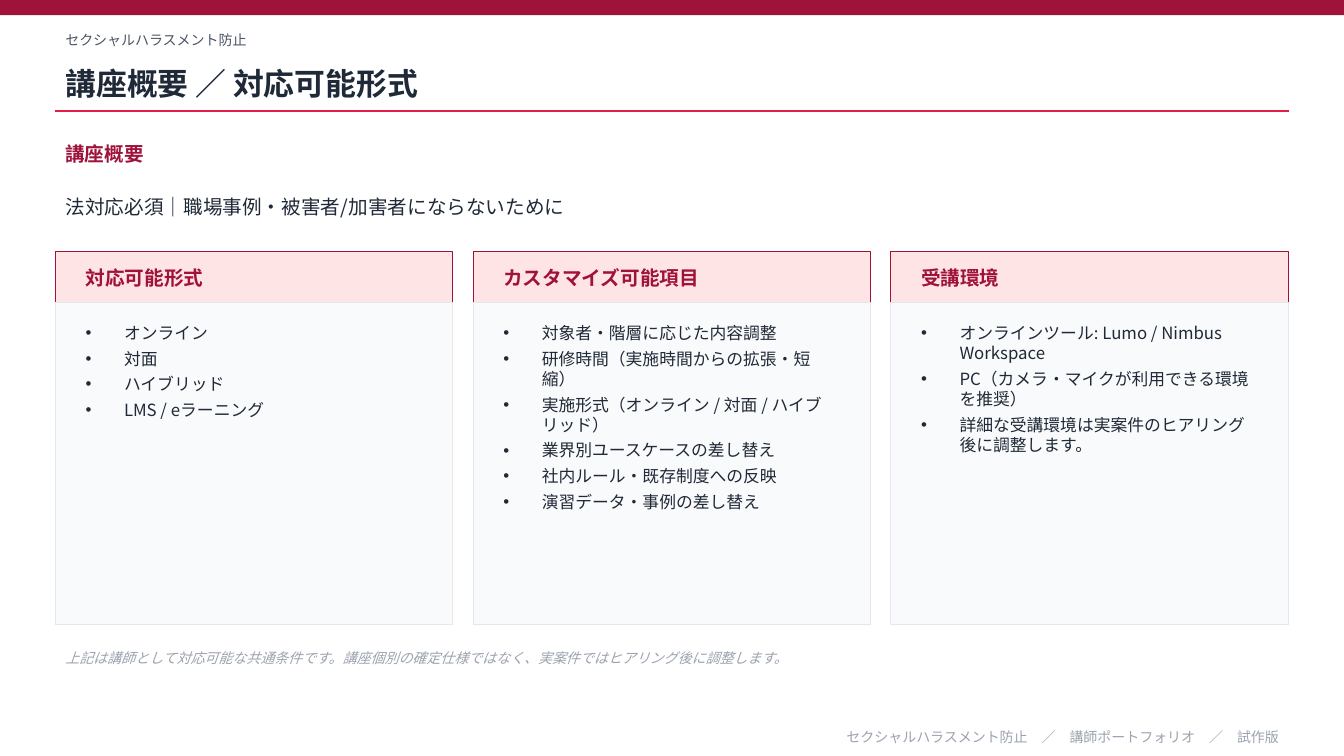
from dataclasses import dataclass

from lxml import etree
from pptx import Presentation
from pptx.dml.color import RGBColor
from pptx.enum.shapes import MSO_CONNECTOR, MSO_SHAPE
from pptx.enum.text import MSO_ANCHOR, MSO_AUTO_SIZE, PP_ALIGN
from pptx.oxml.ns import qn
from pptx.util import Inches, Pt

RECTANGLE = MSO_SHAPE.RECTANGLE
STRAIGHT = MSO_CONNECTOR.STRAIGHT
TOP, MIDDLE = MSO_ANCHOR.TOP, MSO_ANCHOR.MIDDLE
LEFT, RIGHT = PP_ALIGN.LEFT, PP_ALIGN.RIGHT
NO_AUTOFIT = MSO_AUTO_SIZE.NONE
COMPARISON_LAYOUT = 4


@dataclass(frozen=True)
class Theme:
    font: str = "Noto Sans CJK JP"
    crimson: str = "9F1239"
    rule: str = "E11D48"
    blush: str = "FFE4E6"
    panel: str = "F9FAFB"
    panel_edge: str = "E5E7EB"
    ink: str = "1F2937"
    slate: str = "4B5563"
    muted: str = "9CA3AF"
    title_size: int = 22
    heading_size: int = 14
    list_size: int = 12
    small_size: int = 10


class SlideBuilder:
    def __init__(self, slide, theme):
        self.slide = slide
        self.theme = theme

    def rectangle(self, left, top, width, height, fill, edge=None):
        panel = self.slide.shapes.add_shape(
            RECTANGLE, Inches(left), Inches(top), Inches(width), Inches(height))
        panel.shadow.inherit = False
        panel.fill.solid()
        panel.fill.fore_color.rgb = RGBColor.from_string(fill)
        if edge:
            panel.line.color.rgb = RGBColor.from_string(edge)
            panel.line.width = Pt(0.75)
        else:
            panel.line.fill.background()

    def rule(self, left, right, top):
        line = self.slide.shapes.add_connector(
            STRAIGHT, Inches(left), Inches(top), Inches(right), Inches(top))
        line.line.color.rgb = RGBColor.from_string(self.theme.rule)
        line.line.width = Pt(1)
        etree.SubElement(line._element.spPr, qn("a:effectLst"))

    def text(self, box, lines, size, color, placeholder=None, bold=False,
             italic=False, align=LEFT, anchor=MIDDLE, bullets=False):
        left, top, width, height = (Inches(length) for length in box)
        if placeholder is None:
            holder = self.slide.shapes.add_textbox(left, top, width, height)
        else:
            holder = self.slide.placeholders[placeholder]
            holder.left, holder.top = left, top
            holder.width, holder.height = width, height
            # Bring the placeholder in front of the panels drawn so far
            self.slide.shapes._spTree.append(holder._element)
        frame = holder.text_frame
        frame.text = "\n".join(lines)
        frame.word_wrap = True
        frame.auto_size = NO_AUTOFIT
        frame.vertical_anchor = anchor
        for paragraph in frame.paragraphs:
            if bullets:
                self.bullet(paragraph)
            paragraph.alignment = align
            paragraph.space_before = Pt(0)
            paragraph.space_after = Pt(4 if bullets else 0)
            for run in paragraph.runs:
                run.font.name = self.theme.font
                run.font.size = Pt(size)
                run.font.bold = bold
                run.font.italic = italic
                run.font.color.rgb = RGBColor.from_string(color)
                east_asian = etree.SubElement(run.font._element, qn("a:ea"))
                east_asian.set("typeface", self.theme.font)

    def bullet(self, paragraph):
        properties = paragraph._element.get_or_add_pPr()
        properties.set("marL", str(Inches(0.38)))
        properties.set("indent", str(Inches(-0.38)))
        etree.SubElement(properties, qn("a:buChar")).set("char", "•")

    def card(self, left, width, heading, items, placeholder):
        theme = self.theme
        inner_left, inner_width = left + 0.2, width - 0.4
        self.rectangle(left, 2.5, width, 0.5, theme.blush, theme.crimson)
        self.text((inner_left, 2.5, inner_width, 0.5), [heading],
                  theme.heading_size, theme.crimson, bold=True)
        self.rectangle(left, 3, width, 3.2, theme.panel, theme.panel_edge)
        self.text((inner_left, 3.15, inner_width, 2.85), items, theme.list_size,
                  theme.ink, placeholder, anchor=TOP, bullets=True)


CARDS = [
    ("対応可能形式", ["オンライン", "対面", "ハイブリッド", "LMS / eラーニング"]),
    ("カスタマイズ可能項目", [
        "対象者・階層に応じた内容調整",
        "研修時間（実施時間からの拡張・短縮）",
        "実施形式（オンライン / 対面 / ハイブリッド）",
        "業界別ユースケースの差し替え",
        "社内ルール・既存制度への反映",
        "演習データ・事例の差し替え",
    ]),
    ("受講環境", [
        "オンラインツール: Lumo / Nimbus Workspace",
        "PC（カメラ・マイクが利用できる環境を推奨）",
        "詳細な受講環境は実案件のヒアリング後に調整します。",
    ]),
]
MARGIN, CONTENT_WIDTH, CARD_GAP = 0.55, 12.23, 0.2


def main():
    presentation = Presentation()
    presentation.slide_width = Inches(13.33)
    presentation.slide_height = Inches(7.5)
    layout = presentation.slide_layouts[COMPARISON_LAYOUT]
    theme = Theme()
    builder = SlideBuilder(presentation.slides.add_slide(layout), theme)

    def band(top, height):
        return MARGIN, top, CONTENT_WIDTH, height

    # Header
    builder.rectangle(0, 0, 13.33, 0.15, theme.crimson)
    builder.text(band(0.25, 0.3), ["セクシャルハラスメント防止"],
                 theme.small_size, theme.slate)
    builder.text(band(0.55, 0.55), ["講座概要 ／ 対応可能形式"],
                 theme.title_size, theme.ink, placeholder=0, bold=True)
    builder.rule(MARGIN, MARGIN + CONTENT_WIDTH, 1.1)

    # Course overview
    builder.text(band(1.35, 0.35), ["講座概要"],
                 theme.heading_size, theme.crimson, bold=True)
    builder.text(band(1.75, 0.6),
                 ["法対応必須｜職場事例・被害者/加害者にならないために"],
                 theme.heading_size, theme.ink, placeholder=1)

    # Three cards of equal width; their lists use body placeholders 2 to 4
    card_width = (CONTENT_WIDTH - CARD_GAP * (len(CARDS) - 1)) / len(CARDS)
    for column, (heading, items) in enumerate(CARDS):
        card_left = MARGIN + column * (card_width + CARD_GAP)
        builder.card(card_left, card_width, heading, items, column + 2)

    # Note and footer
    builder.text(
        band(6.35, 0.35),
        ["上記は講師として対応可能な共通条件です。講座個別の確定仕様ではなく、"
         "実案件ではヒアリング後に調整します。"],
        theme.small_size, theme.muted, italic=True)
    builder.text(band(7.2, 0.22),
                 ["セクシャルハラスメント防止　／　講師ポートフォリオ　／　試作版"],
                 theme.small_size, theme.muted, align=RIGHT)

    presentation.save("out.pptx")


if __name__ == "__main__":
    main()
